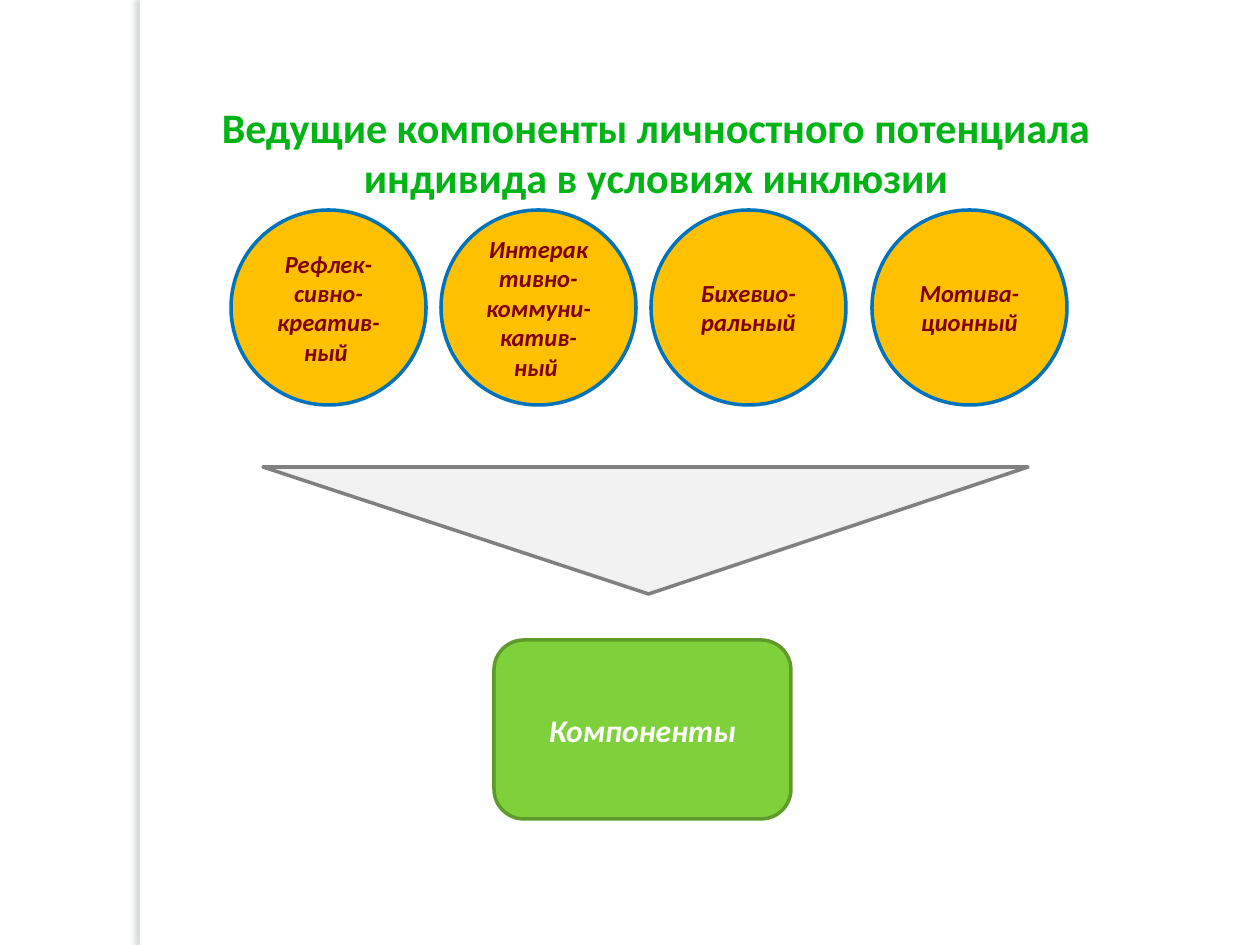
"""Build the slide on the components of personal potential in inclusion."""
from dataclasses import dataclass
from typing import Optional

from lxml.etree import SubElement
from pptx import Presentation
from pptx.dml.color import RGBColor
from pptx.enum.shapes import MSO_SHAPE as Preset
from pptx.enum.text import MSO_ANCHOR as Anchor, PP_ALIGN as Align
from pptx.oxml.ns import qn
from pptx.util import Emu, Pt

PIXELS_PER_INCH = 126


@dataclass(frozen=True)
class Theme:
    font: str = "Calibri"
    white: str = "FFFFFF"
    title: str = "00B415"
    circle_fill: str = "FFC000"
    circle_line: str = "0073BA"
    circle_text: str = "800000"
    funnel_fill: str = "F2F2F2"
    funnel_line: str = "808080"
    result_fill: str = "7FD13B"
    result_line: str = "5E9B2C"
    shadow: str = "697580"
    title_size: int = 24
    circle_size: int = 14
    result_size: int = 18
    line_width: int = 2


@dataclass(frozen=True)
class Box:
    left: int
    top: int
    width: int
    height: int

    def emu(self) -> tuple:
        return tuple(map(px, (self.left, self.top, self.width, self.height)))


@dataclass(frozen=True)
class Component:
    left: int
    label: str


THEME = Theme()
CIRCLE_TOP = 210
CIRCLE_SIDE = 195
COMPONENTS = (
    Component(231, "Рефлек-сивно-креатив-ный "),
    Component(441, "Интерактивно-коммуни-катив-ный "),
    Component(651, "Бихевио-ральный"),
    Component(872, "Мотива-ционный"),
)


def px(length: int) -> Emu:
    return Emu(round(length * 914400 / PIXELS_PER_INCH))


def write_text(shape, text: str, *, size: int, color: str,
               italic: bool = False, anchor: Anchor = Anchor.MIDDLE) -> None:
    frame = shape.text_frame
    frame.word_wrap = True
    frame.vertical_anchor = anchor
    paragraph = frame.paragraphs[0]
    paragraph.alignment = Align.CENTER
    run = paragraph.add_run()
    run.text = text
    font = run.font
    font.name, font.size = THEME.font, Pt(size)
    font.bold, font.italic = True, italic
    font.color.rgb = RGBColor.from_string(color)


def add_figure(slide, preset: Preset, box: Box, fill: str,
               line: Optional[str] = None):
    shape = slide.shapes.add_shape(preset, *box.emu())
    shape.shadow.inherit = False
    shape.fill.solid()
    shape.fill.fore_color.rgb = RGBColor.from_string(fill)
    if line is None:
        shape.line.fill.background()
    else:
        shape.line.color.rgb = RGBColor.from_string(line)
        shape.line.width = Pt(THEME.line_width)
    return shape


def add_left_shadow(shape) -> None:
    effects = shape.element.spPr.find(qn("a:effectLst"))
    shadow = SubElement(effects, qn("a:outerShdw"), blurRad=str(Pt(3)),
                        dist=str(Pt(3)), dir="10800000", rotWithShape="0")
    color = SubElement(shadow, qn("a:srgbClr"), val=THEME.shadow)
    SubElement(color, qn("a:alpha"), val="25000")


def add_component(slide, component: Component) -> None:
    box = Box(component.left, CIRCLE_TOP, CIRCLE_SIDE, CIRCLE_SIDE)
    circle = add_figure(slide, Preset.OVAL, box,
                        THEME.circle_fill, THEME.circle_line)
    write_text(circle, component.label, size=THEME.circle_size,
               color=THEME.circle_text, italic=True)


def main() -> None:
    presentation = Presentation()
    presentation.slide_width, presentation.slide_height = px(1260), px(945)
    slide = presentation.slides.add_slide(presentation.slide_layouts[6])

    strip = add_figure(slide, Preset.RECTANGLE, Box(140, 0, 10, 945), THEME.white)
    add_left_shadow(strip)

    title = slide.shapes.add_textbox(*Box(136, 95, 1040, 115).emu())
    write_text(title, "Ведущие компоненты личностного потенциала индивида "
               "в условиях инклюзии", size=THEME.title_size,
               color=THEME.title, anchor=Anchor.TOP)

    funnel = add_figure(slide, Preset.ISOSCELES_TRIANGLE, Box(263, 467, 765, 127),
                        THEME.funnel_fill, THEME.funnel_line)
    funnel.rotation = 180
    funnel.adjustments[0] = 0.496

    for component in COMPONENTS:
        add_component(slide, component)

    result = add_figure(slide, Preset.ROUNDED_RECTANGLE, Box(494, 640, 297, 179),
                        THEME.result_fill, THEME.result_line)
    write_text(result, "Компоненты", size=THEME.result_size,
               color=THEME.white, italic=True)

    presentation.save("out.pptx")


if __name__ == "__main__":
    main()
